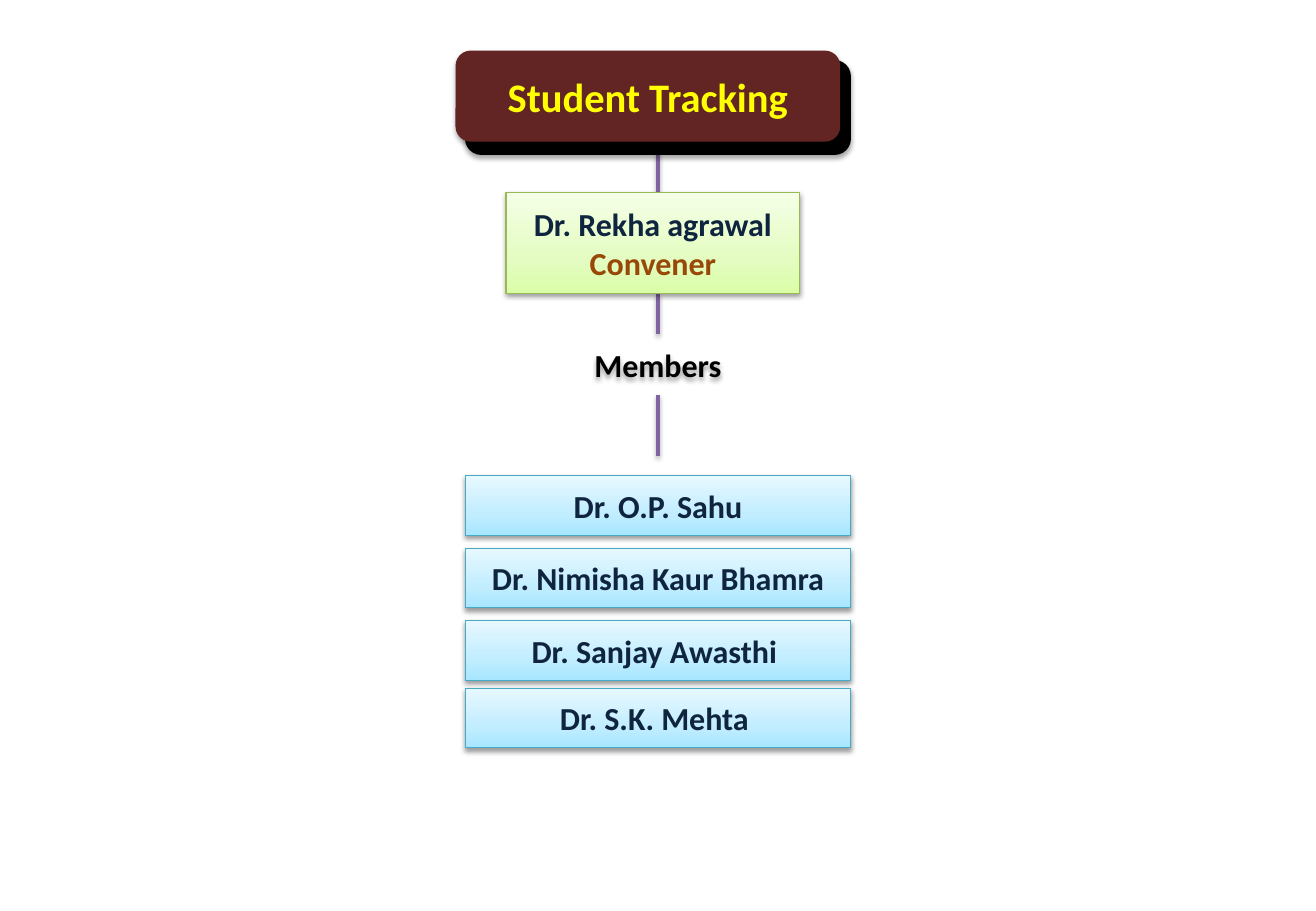
from lxml import etree
from pptx import Presentation
from pptx.dml.color import RGBColor
from pptx.enum.shapes import MSO_CONNECTOR, MSO_SHAPE
from pptx.enum.text import MSO_ANCHOR, MSO_AUTO_SIZE, PP_ALIGN
from pptx.oxml import parse_xml
from pptx.oxml.ns import nsdecls, qn
from pptx.util import Pt

RECT, ROUNDED = MSO_SHAPE.RECTANGLE, MSO_SHAPE.ROUNDED_RECTANGLE
STRAIGHT = MSO_CONNECTOR.STRAIGHT
MIDDLE, CENTER = MSO_ANCHOR.MIDDLE, PP_ALIGN.CENTER
NO_AUTOFIT = MSO_AUTO_SIZE.NONE

BLACK = RGBColor(0x00, 0x00, 0x00)
MAROON = RGBColor(0x63, 0x25, 0x23)
YELLOW = RGBColor(0xFF, 0xFF, 0x00)
NAVY = RGBColor(0x0F, 0x24, 0x3E)
BROWN = RGBColor(0x98, 0x48, 0x07)
PURPLE = RGBColor(0x80, 0x64, 0xA2)
GREEN_LINE = RGBColor(0x98, 0xB9, 0x55)
BLUE_LINE = RGBColor(0x46, 0xAA, 0xC5)
GREENS = [RGBColor(0xDA, 0xFD, 0xA7), RGBColor(0xE4, 0xFC, 0xC2), RGBColor(0xF5, 0xFF, 0xE7)]
BLUES = [RGBColor(0xA7, 0xE6, 0xFF), RGBColor(0xC1, 0xED, 0xFF), RGBColor(0xE7, 0xF8, 0xFF)]
STOPS = [0, 35, 100]

MEMBERS = [
    (282, "Dr. O.P. Sahu"),
    (325, "Dr. Nimisha Kaur Bhamra"),
    (368, "Dr. Sanjay Awasthi "),
    (408, "Dr. S.K. Mehta "),
]


class Chart:
    font = "Calibri"
    size = 19

    def __init__(self, slide):
        self.slide = slide
        self.shapes = slide.shapes

    def shadow(self, sp, dist=1.6, alpha=38):
        """Add a soft downward shadow; call after fill and line are set."""
        spPr = sp._element.spPr
        for old in spPr.findall(qn("a:effectLst")):
            spPr.remove(old)
        spPr.append(parse_xml(
            f'<a:effectLst {nsdecls("a")}><a:outerShdw blurRad="{Pt(3.1)}" dist="{Pt(dist)}" '
            f'dir="5400000" rotWithShape="0"><a:srgbClr val="000000">'
            f'<a:alpha val="{alpha * 1000}"/></a:srgbClr></a:outerShdw></a:effectLst>'))

    def gradient(self, sp, colors):
        """Fill from bottom to top through the given colours."""
        sp.fill.gradient()
        grad = sp._element.spPr.find(qn("a:gradFill"))
        stops = grad.find(qn("a:gsLst"))
        for old in list(stops):
            stops.remove(old)
        for pos, color in zip(STOPS, colors):
            gs = etree.SubElement(stops, qn("a:gs"), pos=str(pos * 1000))
            etree.SubElement(gs, qn("a:srgbClr"), val=str(color))
        sp.fill.gradient_angle = 90

    def text(self, sp, lines, size=size):
        tf = sp.text_frame
        tf.word_wrap = True
        tf.auto_size = NO_AUTOFIT
        tf.vertical_anchor = MIDDLE
        tf.margin_left = tf.margin_right = Pt(5)
        tf.margin_top = tf.margin_bottom = Pt(3)
        for i, (words, color) in enumerate(lines):
            p = tf.add_paragraph() if i else tf.paragraphs[0]
            p.alignment = CENTER
            r = p.add_run()
            r.text = words
            r.font.name, r.font.size, r.font.bold = self.font, Pt(size), True
            r.font.color.rgb = color

    def plate(self, left, top, width, height, color):
        sp = self.shapes.add_shape(ROUNDED, Pt(left), Pt(top), Pt(width), Pt(height))
        sp.fill.solid()
        sp.fill.fore_color.rgb = color
        sp.line.fill.background()
        self.shadow(sp, 1.8, 35)
        return sp

    def box(self, left, top, width, height, colors, line, lines):
        sp = self.shapes.add_shape(RECT, Pt(left), Pt(top), Pt(width), Pt(height))
        self.gradient(sp, colors)
        sp.line.color.rgb = line
        sp.line.width = Pt(0.75)
        self.shadow(sp)
        self.text(sp, lines)

    def label(self, left, top, width, height, words):
        sp = self.shapes.add_textbox(Pt(left), Pt(top), Pt(width), Pt(height))
        self.shadow(sp)
        self.text(sp, [(words, BLACK)])

    def link(self, x, top, bottom):
        cx = self.shapes.add_connector(STRAIGHT, Pt(x), Pt(top), Pt(x), Pt(bottom))
        cx.line.color.rgb = PURPLE
        cx.line.width = Pt(2)
        self.shadow(cx)

    def title(self, left, top, width, height, words):
        back = self.plate(left + 6, top + 6, width, height + 1.5, BLACK)
        back.line.color.rgb = BLACK
        back.line.width = Pt(0.75)
        self.plate(left, top, width, height, MAROON)
        sp = self.shapes.title
        sp.left, sp.top, sp.width, sp.height = Pt(left), Pt(top), Pt(width), Pt(height)
        self.text(sp, [(words, YELLOW)], 24)
        self.shapes._spTree.append(sp._element)  # bring the title above its plates


def main():
    prs = Presentation()
    prs.slide_width, prs.slide_height = Pt(780), Pt(540)
    chart = Chart(prs.slides.add_slide(prs.slide_layouts[5]))

    for top, bottom in [(90, 114), (174, 198), (234, 270)]:
        chart.link(390, top, bottom)
    chart.title(270, 30, 228, 54, "Student Tracking")
    chart.box(300, 114, 174, 60, GREENS, GREEN_LINE,
              [("Dr. Rekha agrawal", NAVY), ("Convener", BROWN)])
    chart.label(300, 198.5, 180, 35.3, "Members")
    for top, name in MEMBERS:
        chart.box(276, top, 228, 35.3, BLUES, BLUE_LINE, [(name, NAVY)])

    prs.save("out.pptx")


if __name__ == "__main__":
    main()
